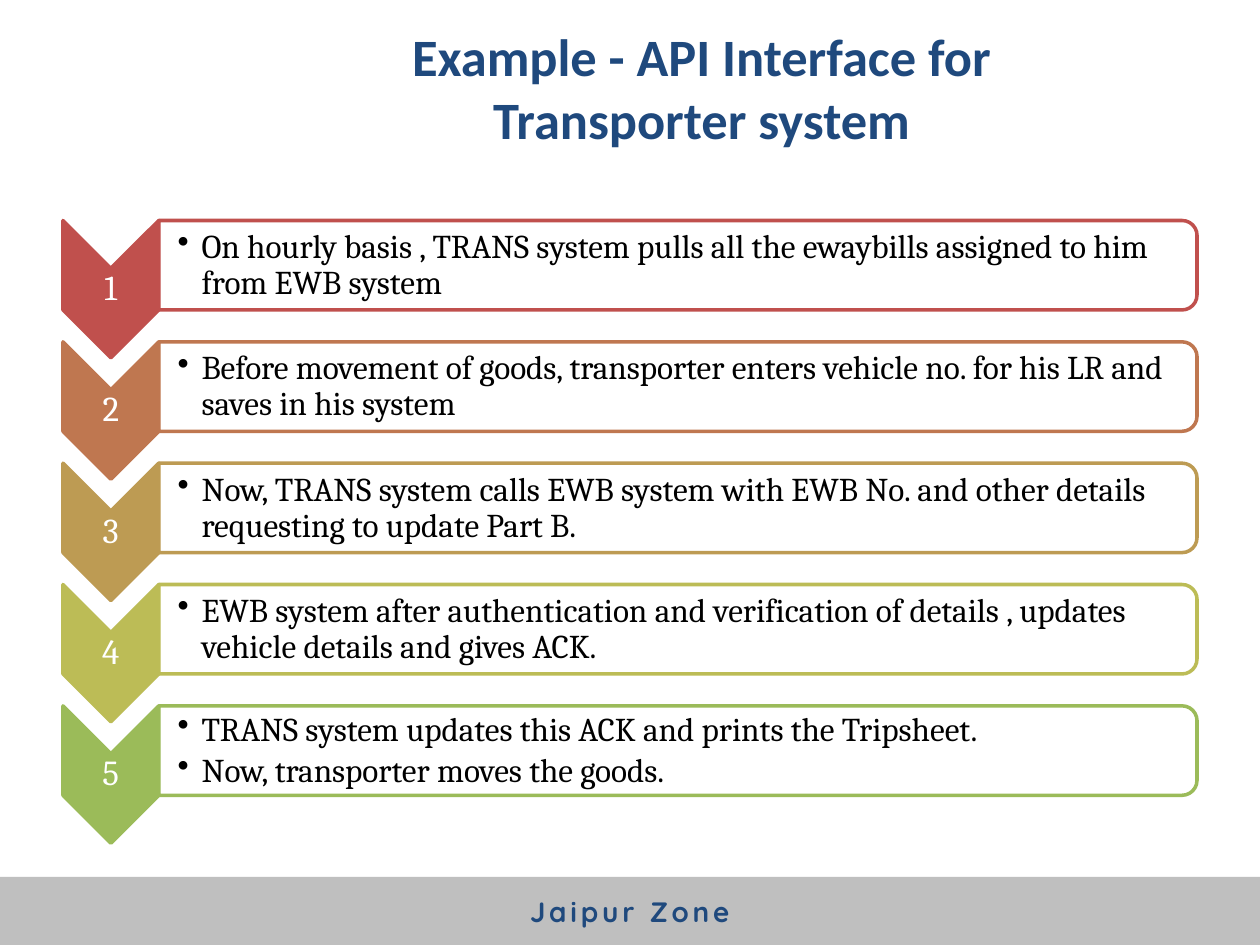
from lxml.etree import SubElement
from pptx import Presentation
from pptx.dml.color import RGBColor
from pptx.enum.shapes import MSO_SHAPE as SHAPE
from pptx.enum.text import MSO_ANCHOR as ANCHOR, PP_ALIGN as ALIGN
from pptx.oxml.ns import qn
from pptx.util import Inches, Pt

NAVY = RGBColor(0x1F, 0x49, 0x7D)
GREY = RGBColor(0xBF, 0xBF, 0xBF)
WHITE = RGBColor(0xFF, 0xFF, 0xFF)
BLACK = RGBColor(0, 0, 0)

STEPS = [
    (RGBColor(0xC0, 0x50, 0x4D),
     ["On hourly basis , TRANS system pulls all the ewaybills assigned to him from EWB system"]),
    (RGBColor(0xBF, 0x77, 0x50),
     ["Before movement of goods, transporter enters vehicle no. for his LR and saves in his system"]),
    (RGBColor(0xBD, 0x9B, 0x53),
     ["Now, TRANS system calls EWB system with EWB No. and other details requesting to update Part B."]),
    (RGBColor(0xBC, 0xBC, 0x56),
     ["EWB system after authentication and verification of details , updates vehicle details and gives ACK."]),
    (RGBColor(0x9B, 0xBB, 0x59),
     ["TRANS system updates this ACK and prints the Tripsheet.",
      "Now, transporter moves the goods."]),
]

SLIDE_W, SLIDE_H = 10, 7.5
LIST_X, LIST_Y = 0.5, 1.75
ROW_PITCH = 0.963
CHEVRON_W, CHEVRON_H = 0.76, 1.09
PANEL_W, PANEL_H = 8.24, 0.71
FOOTER_H = 0.54


def add_text(p, text, size, font, color, bold=False, align=ALIGN.CENTER,
             line_spacing=None, spacing=None):
    """Add a run to p; spacing is the letter spacing in points."""
    p.alignment = align
    if line_spacing:
        p.line_spacing = line_spacing
    r = p.add_run()
    r.text = text
    r.font.size, r.font.name, r.font.bold = Pt(size), font, bold
    r.font.color.rgb = color
    if spacing:
        r._r.get_or_add_rPr().set("spc", str(round(spacing * 100)))


def add_bullet(p, indent):
    p.level = 1
    pPr = p._p.get_or_add_pPr()
    pPr.set("marL", str(Inches(indent)))
    pPr.set("indent", str(-Inches(indent)))
    SubElement(pPr, qn("a:buChar")).set("char", "•")


def text_box(shapes, x, y, w, h, left_inset=0.01):
    tf = shapes.add_textbox(Inches(x), Inches(y), Inches(w), Inches(h)).text_frame
    tf.word_wrap = True
    tf.vertical_anchor = ANCHOR.MIDDLE
    tf.margin_left = Inches(left_inset)
    tf.margin_top = tf.margin_right = tf.margin_bottom = Inches(0.01)
    return tf


def turned_shape(shapes, kind, x, y, w, h, fill, line):
    """Add a shape turned by 90 degrees that fills the visible box x, y, w, h."""
    sp = shapes.add_shape(kind, Inches(x + (w - h) / 2), Inches(y + (h - w) / 2),
                          Inches(h), Inches(w))
    sp.rotation = 90
    sp.shadow.inherit = False
    sp.fill.solid()
    sp.fill.fore_color.rgb = fill
    sp.line.color.rgb = line
    sp.line.width = Pt(2)
    return sp


def add_step(shapes, x, y, number, color, lines):
    """Place a numbered chevron and its bulleted panel with the top left at x, y."""
    turned_shape(shapes, SHAPE.CHEVRON, x, y, CHEVRON_W, CHEVRON_H, color, color)
    notch = CHEVRON_W / 2
    tf = text_box(shapes, x, y + notch, CHEVRON_W, CHEVRON_H - 2 * notch)
    add_text(tf.paragraphs[0], str(number), 20, "Cambria", WHITE, line_spacing=0.9)

    panel_x = x + CHEVRON_W
    panel = turned_shape(shapes, SHAPE.ROUND_2_SAME_RECTANGLE, panel_x, y,
                         PANEL_W, PANEL_H, WHITE, color)
    rgb = panel.fill._xPr.find(qn("a:solidFill"))[0]
    SubElement(rgb, qn("a:alpha")).set("val", "90000")

    tf = text_box(shapes, panel_x, y + 0.04, PANEL_W - 0.04, PANEL_H - 0.07, 0.15)
    for i, line in enumerate(lines):
        p = tf.add_paragraph() if i else tf.paragraphs[0]
        add_bullet(p, 0.19)
        p.space_after = Pt(3)
        add_text(p, line, 19, "Cambria", BLACK, align=ALIGN.LEFT, line_spacing=0.9)


def add_steps(s, x, y):
    shapes = s.shapes.add_group_shape().shapes
    for i, (color, lines) in enumerate(STEPS):
        add_step(shapes, x, y + i * ROW_PITCH, i + 1, color, lines)


def add_title(s, x, y, w, h):
    title = s.shapes.title
    title.left, title.top, title.width, title.height = map(Inches, (x, y, w, h))
    title.text_frame.vertical_anchor = ANCHOR.MIDDLE
    add_text(title.text_frame.paragraphs[0],
             "Example - API Interface for Transporter system",
             30, "Calibri", NAVY, bold=True)


def add_footer(s, x, y, w, h):
    sp = s.shapes.add_shape(SHAPE.RECTANGLE, *map(Inches, (x, y, w, h)))
    sp.shadow.inherit = False
    sp.fill.solid()
    sp.fill.fore_color.rgb = GREY
    sp.line.fill.background()
    sp.text_frame.vertical_anchor = ANCHOR.MIDDLE
    add_text(sp.text_frame.paragraphs[0], "Jaipur Zone", 16, "Quicksand", NAVY,
             bold=True, spacing=2.2)


def main():
    prs = Presentation()
    prs.slide_width, prs.slide_height = Inches(SLIDE_W), Inches(SLIDE_H)
    s = prs.slides.add_slide(prs.slide_layouts[5])
    add_title(s, 2.25, 0.13, 6.64, 1.12)
    add_steps(s, LIST_X, LIST_Y)
    add_footer(s, 0, SLIDE_H - FOOTER_H, SLIDE_W, FOOTER_H)
    prs.save("out.pptx")


if __name__ == "__main__":
    main()
